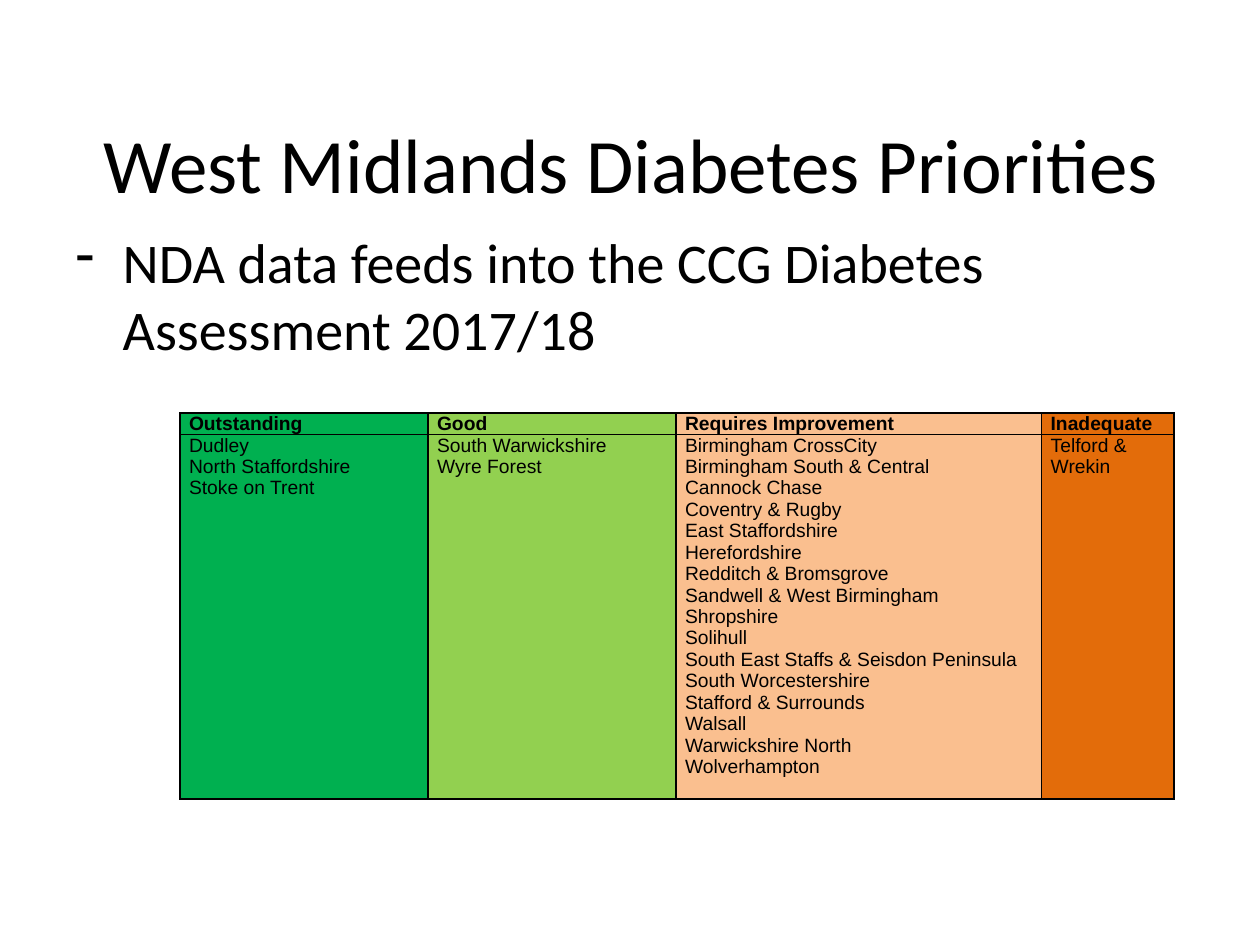
from dataclasses import dataclass

from lxml import etree
from pptx import Presentation
from pptx.dml.color import RGBColor
from pptx.enum.text import MSO_ANCHOR, PP_ALIGN
from pptx.oxml.ns import qn
from pptx.util import Cm, Length, Pt

BLACK = RGBColor(0x00, 0x00, 0x00)
GREEN = RGBColor(0x00, 0xB0, 0x50)
LIME = RGBColor(0x92, 0xD0, 0x50)
PEACH = RGBColor(0xFA, 0xBF, 0x8F)
ORANGE = RGBColor(0xE3, 0x6C, 0x0A)
MIDDLE, TOP = MSO_ANCHOR.MIDDLE, MSO_ANCHOR.TOP
CENTER = PP_ALIGN.CENTER

TITLE_FONT = {"name": "Calibri", "size": Pt(44)}
BODY_FONT = {"name": "Calibri", "size": Pt(32)}
HEADING_FONT = {"name": "Arial", "size": Pt(11), "bold": True}
AREA_FONT = {"name": "Arial", "size": Pt(11), "bold": False}
CELL_FORMAT = {
    "margin_left": Cm(0.18), "margin_right": Cm(0.18),
    "margin_top": 0, "margin_bottom": 0, "vertical_anchor": TOP,
}
ROW_HEIGHTS = (Cm(0.43), Cm(7.34))
BORDER = Pt(1)
HANGING_INDENT = Cm(0.95)


@dataclass(frozen=True)
class Rating:
    heading: str
    width: Length
    fill: RGBColor
    areas: tuple[str, ...]


RATINGS = (
    Rating("Outstanding", Cm(5), GREEN,
           ("Dudley", "North Staffordshire", "Stoke on Trent")),
    Rating("Good", Cm(5), LIME, ("South Warwickshire", "Wyre Forest")),
    Rating("Requires Improvement", Cm(7.37), PEACH, (
        "Birmingham CrossCity", "Birmingham South & Central",
        "Cannock Chase", "Coventry & Rugby", "East Staffordshire",
        "Herefordshire", "Redditch & Bromsgrove",
        "Sandwell & West Birmingham", "Shropshire", "Solihull",
        "South East Staffs & Seisdon Peninsula", "South Worcestershire",
        "Stafford & Surrounds", "Walsall", "Warwickshire North",
        "Wolverhampton")),
    Rating("Inadequate", Cm(2.67), ORANGE, ("Telford & Wrekin",)),
)


def apply_format(target, values: dict) -> None:
    for attribute, value in values.items():
        setattr(target, attribute, value)


def write_lines(frame, lines: tuple[str, ...], font: dict) -> None:
    frame.text = "\n".join(lines)
    for paragraph in frame.paragraphs:
        for run in paragraph.runs:
            apply_format(run.font, font)
            run.font.color.rgb = BLACK


def place(shape, left: Length, top: Length, width: Length, height: Length) -> None:
    apply_format(shape, {"left": left, "top": top, "width": width, "height": height})


def add_dash_bullet(paragraph) -> None:
    properties = paragraph._p.get_or_add_pPr()
    properties.set("marL", str(HANGING_INDENT))
    properties.set("indent", str(-HANGING_INDENT))
    etree.SubElement(properties, qn("a:buFontTx"))
    etree.SubElement(properties, qn("a:buChar"), char="-")


def add_borders(cell) -> None:
    properties = cell._tc.get_or_add_tcPr()
    for position, side in enumerate(("a:lnL", "a:lnR", "a:lnT", "a:lnB")):
        line = etree.Element(qn(side), w=str(BORDER))
        fill = etree.SubElement(line, qn("a:solidFill"))
        etree.SubElement(fill, qn("a:srgbClr"), val=str(BLACK))
        properties.insert(position, line)


def fill_cell(cell, lines: tuple[str, ...], font: dict, color: RGBColor) -> None:
    write_lines(cell.text_frame, lines, font)
    apply_format(cell, CELL_FORMAT)
    cell.fill.solid()
    cell.fill.fore_color.rgb = color
    add_borders(cell)


def add_ratings_table(slide, left: Length, top: Length) -> None:
    width = sum(rating.width for rating in RATINGS)
    table = slide.shapes.add_table(
        len(ROW_HEIGHTS), len(RATINGS), left, top, width, sum(ROW_HEIGHTS)).table
    apply_format(table, {"first_row": False, "horz_banding": False})
    for row, height in zip(table.rows, ROW_HEIGHTS):
        row.height = height
    for index, rating in enumerate(RATINGS):
        table.columns[index].width = rating.width
        fill_cell(table.cell(0, index), (rating.heading,), HEADING_FONT, rating.fill)
        fill_cell(table.cell(1, index), rating.areas, AREA_FONT, rating.fill)


def main() -> None:
    presentation = Presentation()
    presentation.slide_width, presentation.slide_height = Cm(25.4), Cm(19.05)
    slide = presentation.slides.add_slide(presentation.slide_layouts[1])

    title = slide.shapes.title
    place(title, Cm(1.3), Cm(1.68), Cm(22.86), Cm(3.18))
    write_lines(title.text_frame, ("West Midlands Diabetes Priorities",), TITLE_FONT)
    title.text_frame.vertical_anchor = MIDDLE
    title.text_frame.paragraphs[0].alignment = CENTER

    body = slide.placeholders[1]
    place(body, Cm(1.27), Cm(4.45), Cm(22.86), Cm(12.57))
    write_lines(body.text_frame,
                ("NDA data feeds into the CCG Diabetes Assessment 2017/18",), BODY_FONT)
    add_dash_bullet(body.text_frame.paragraphs[0])

    add_ratings_table(slide, Cm(3.63), Cm(8.33))
    presentation.save("out.pptx")


if __name__ == "__main__":
    main()
